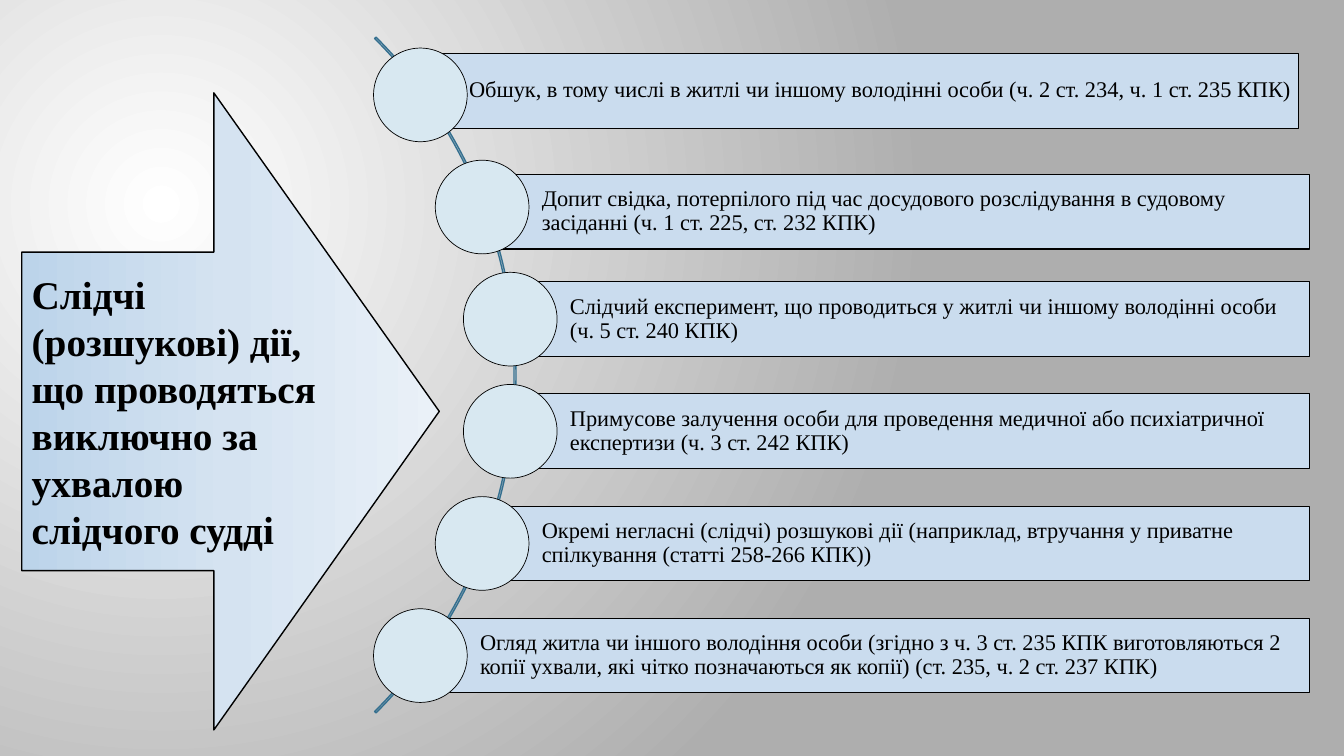
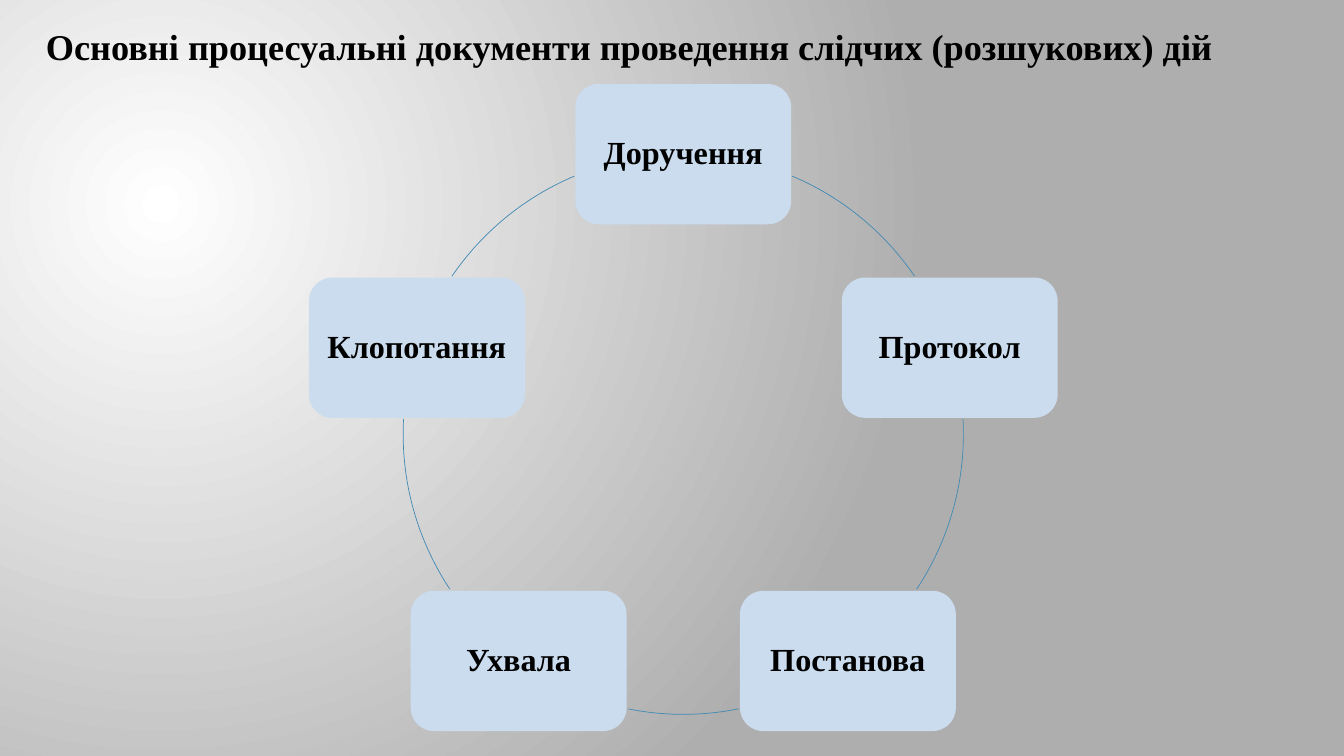
from math import cos, radians, sin

from pptx import Presentation
from pptx.dml.color import RGBColor
from pptx.enum.shapes import MSO_SHAPE as SHAPE
from pptx.enum.text import MSO_ANCHOR as ANCHOR, PP_ALIGN as ALIGN
from pptx.oxml import parse_xml
from pptx.oxml.ns import nsdecls, qn
from pptx.util import Emu, Pt

COLS, ROWS, CELL = 160, 90, 76200
FONT = "Times New Roman"
COLORS = {
    "text": "000000",
    "bar": "CADCEE",
    "dot": "D8E8F1",
    "arc": "346F8F",
    "ring": "418AB3",
    "outline": "000000",
}
BACK_STOPS = [(0, "FFFFFF"), (100, "AEAEAE")]
BACK_PATH = '<a:path path="circle"><a:fillToRect l="50000" t="55000" r="125000" b="100000"/></a:path>'
ARROW_STOPS = [(0, "BCD4EA"), (50, "D5E3F1"), (100, "EAF1F8")]
ARROW_PATH = '<a:lin ang="0" scaled="0"/>'

BAR_TEXT = {"size": 16, "spacing": 0.9, "insets": (7.1, 0.5, 0.5, 0.5)}
NODE_TEXT = {"size": 23, "bold": True, "align": ALIGN.CENTER, "spacing": 0.9,
             "insets": (1.2, 1.2, 1.2, 1.2)}
ARROW_TEXT = {"size": 28, "bold": True}
TITLE_TEXT = {"size": 25.9, "bold": True, "anchor": ANCHOR.TOP}

ARROW_LABEL = "Слідчі (розшукові) дії, що проводяться виключно за ухвалою слідчого судді"
TITLE = "Основні процесуальні документи проведення слідчих (розшукових) дій"
ACTIONS = [
    (50.05, -1.3, -0.5, "Обшук, в тому числі в житлі чи іншому володінні особи (ч. 2 ст. 234, ч. 1 ст. 235 КПК)"),
    (57.4, 0, 0.55, "Допит свідка, потерпілого під час досудового розслідування в судовому "
                    "засіданні (ч. 1 ст. 225, ст. 232 КПК)"),
    (60.75, 0, 0, "Слідчий експеримент, що проводиться у житлі чи іншому володінні особи (ч. 5 ст. 240 КПК)"),
    (60.75, 0, 0, "Примусове залучення особи для проведення медичної або психіатричної "
                  "експертизи (ч. 3 ст. 242 КПК)"),
    (57.4, 0, 0, "Окремі негласні (слідчі) розшукові дії (наприклад, втручання у приватне "
                 "спілкування (статті 258-266 КПК))"),
    (50.05, 0, 0, "Огляд житла чи іншого володіння особи (згідно з ч. 3 ст. 235 КПК виготовляються 2 "
                  "копії ухвали, які чітко позначаються як копії) (ст. 235, ч. 2 ст. 237 КПК)"),
]
DOCUMENTS = ["Доручення", "Протокол", "Постанова", "Ухвала", "Клопотання"]
RING_SPANS = [(292.9, 325.7), (356.9, 33.6), (78.6, 101.4), (146.4, 183.1), (214.3, 247.1)]


def grid(*cells):
    """Turn grid cells into lengths."""
    return [Emu(round(c * CELL)) for c in cells]


def centred(x, y, w, h):
    """Give the box of a given size around a centre."""
    return x - w / 2, y - h / 2, w, h


def set_gradient(fill, element, stops, path):
    """Fill with colour stops running along a path."""
    fill.gradient()
    old = next(element.iter(qn("a:gradFill")))
    marks = "".join(f'<a:gs pos="{pos * 1000}"><a:srgbClr val="{color}"/></a:gs>' for pos, color in stops)
    old.getparent().replace(old, parse_xml(
        f'<a:gradFill {nsdecls("a")} rotWithShape="1"><a:gsLst>{marks}</a:gsLst>{path}</a:gradFill>'))


def write(sp, text, size, bold=False, align=ALIGN.LEFT, anchor=ANCHOR.MIDDLE,
          spacing=1.0, insets=(1.2, 0.6, 1.2, 0.6)):
    """Write one formatted paragraph into a shape."""
    tf = sp.text_frame
    left, top, right, bottom = grid(*insets)
    frame = {"word_wrap": True, "vertical_anchor": anchor, "margin_left": left,
             "margin_top": top, "margin_right": right, "margin_bottom": bottom}
    p = tf.paragraphs[0]
    r = p.add_run()
    r.text = text
    formats = [(tf, frame), (p, {"alignment": align, "line_spacing": spacing}),
               (r.font, {"name": FONT, "size": Pt(size), "bold": bold})]
    for target, values in formats:
        for name, value in values.items():
            setattr(target, name, value)
    r.font.color.rgb = RGBColor.from_string(COLORS["text"])


def add_shape(s, kind, box, fill=None, line=None, width=1, adjust=()):
    """Add a flat preset shape on the grid."""
    sp = s.shapes.add_shape(kind, *grid(*box))
    sp.shadow.inherit = False
    for i, value in enumerate(adjust):
        sp.adjustments[i] = value
    if fill:
        sp.fill.solid()
        sp.fill.fore_color.rgb = RGBColor.from_string(COLORS[fill])
    else:
        sp.fill.background()
    if line:
        sp.line.color.rgb = RGBColor.from_string(COLORS[line])
        sp.line.width = Pt(width)
    else:
        sp.line.fill.background()
    return sp


def add_action(s, row, x, dx, dy, text):
    """Add a text bar with the circle at its left end."""
    y, right, height = 11.3 + 13.35 * row, 155.9, 8.9
    bar = add_shape(s, SHAPE.RECTANGLE, (x + dx, y + dy - height / 2, right - x, height),
                    "bar", "outline", 0.75)
    write(bar, text, **BAR_TEXT)
    add_shape(s, SHAPE.OVAL, centred(x, y, 11.15, 11.15), "dot", "outline", 0.5)


def add_ring(s, x, y, radius):
    """Add the documents evenly round a circle, with arcs between them."""
    step = 360 / len(DOCUMENTS)
    for i, (text, span) in enumerate(zip(DOCUMENTS, RING_SPANS)):
        angle = radians(i * step - 90)
        box = centred(x + radius * cos(angle), y + radius * sin(angle), 25.7, 16.7)
        write(add_shape(s, SHAPE.ROUNDED_RECTANGLE, box, "bar"), text, **NODE_TEXT)
        add_shape(s, SHAPE.ARC, centred(x, y, 2 * radius, 2 * radius), line="ring", width=0.5,
                  adjust=[degrees * 0.6 for degrees in span])


def build_actions(s):
    """Build the slide of actions that need a court ruling."""
    add_shape(s, SHAPE.BLOCK_ARC, centred(4.55, 44.65, 113.75, 113.75), line="arc",
              adjust=(189, 27, 0.002))
    for row, action in enumerate(ACTIONS):
        add_action(s, row, *action)
    arrow = add_shape(s, SHAPE.RIGHT_ARROW, (2.6, 11.05, 49.7, 75.85), line="outline",
                      adjust=(0.5, 0.54))
    set_gradient(arrow.fill, arrow.element, ARROW_STOPS, ARROW_PATH)
    write(arrow, ARROW_LABEL, **ARROW_TEXT)


def build_documents(s):
    """Build the slide of procedural documents."""
    write(s.shapes.add_textbox(*grid(4.3, 2.3, 149, 10)), TITLE, **TITLE_TEXT)
    add_ring(s, 81.35, 51.7, 33.35)


def main():
    """Build and save the presentation."""
    prs = Presentation()
    prs.slide_width, prs.slide_height = grid(COLS, ROWS)
    master = prs.slide_master
    set_gradient(master.background.fill, master.element, BACK_STOPS, BACK_PATH)
    for build in (build_actions, build_documents):
        build(prs.slides.add_slide(prs.slide_layouts[6]))
    prs.save("out.pptx")


if __name__ == "__main__":
    main()
